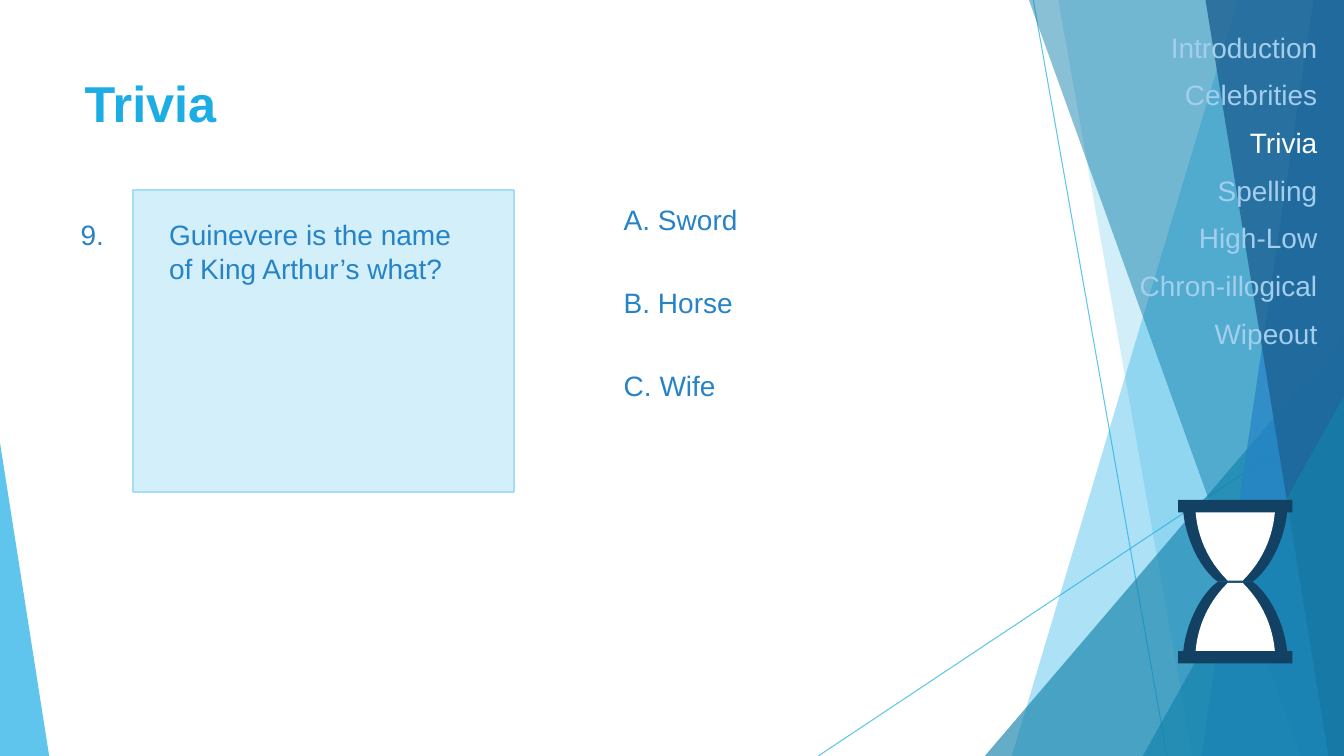
from lxml import etree
from pptx import Presentation
from pptx.dml.color import RGBColor
from pptx.enum.shapes import MSO_CONNECTOR, MSO_SHAPE
from pptx.enum.text import MSO_ANCHOR, MSO_AUTO_SIZE, PP_ALIGN
from pptx.oxml.ns import qn
from pptx.util import Cm, Pt

RECT, TRIANGLE = MSO_SHAPE.RECTANGLE, MSO_SHAPE.ISOSCELES_TRIANGLE
STRAIGHT = MSO_CONNECTOR.STRAIGHT
LEFT, RIGHT, TOP = PP_ALIGN.LEFT, PP_ALIGN.RIGHT, MSO_ANCHOR.TOP
W, H = 33.87, 19.05
SKY, TEAL, BLUE, NAVY = "1CADE4", "1482AC", "2683C6", "134163"
PALE, WHITE = "A3CEED", "FFFFFF"


def color(fmt, hex_color, opacity=100):
    """Set a fill, line fill or font to a solid colour, opacity in percent."""
    if hasattr(fmt, "solid"):
        fmt.solid()
        target = fmt.fore_color
    else:
        target = fmt.color
    target.rgb = RGBColor.from_string(hex_color)
    if opacity < 100:
        for clr in fmt._xPr.iter(qn("a:srgbClr")):
            etree.SubElement(clr, qn("a:alpha"), val=str(opacity * 1000))


def polygon(points, hex_color, opacity=100):
    """Draw a closed, unlined shape through points given in cm."""
    pts = [(Cm(x), Cm(y)) for x, y in points]
    fb = s.shapes.build_freeform(*pts[0])
    fb.add_line_segments(pts[1:], close=True)
    sp = fb.convert_to_shape()
    sp.shadow.inherit = False
    sp.line.fill.background()
    color(sp.fill, hex_color, opacity)


prs = Presentation()
prs.slide_width, prs.slide_height = Cm(W), Cm(H)
s = prs.slides.add_slide(prs.slide_layouts[5])

# Background: thin lines, slanted facets and corner triangles
for x1, y1, x2 in [(26.04, 0, 29.41), (W, 10.24, 20.62)]:
    line = s.shapes.add_connector(STRAIGHT, Cm(x1), Cm(y1), Cm(x2), Cm(H))
    line.line.width = Pt(0.75)
    color(line.line.fill, SKY, 70)
    etree.SubElement(line._element.spPr, qn("a:effectLst"))

# Facets reach the right edge: top x, bottom x; triangles: left, top, width, apex
facets = [
    ("facet", (31.19, 25.5), SKY, 36),
    ("facet", (26.67, 30.05), SKY, 20),
    ("triangle", (24.82, 8.46, W - 24.82, 1), TEAL, 66),
    ("facet", (25.93, 32.79), TEAL, 50),
    ("facet", (33.1, 30.28), BLUE, 70),
    ("facet", (30.38, 33.48), "1D6294", 80),
    ("triangle", (28.8, 9.98, W - 28.8, 1), TEAL, 66),
    ("triangle", (0, 11.15, 1.24, 0), SKY, 70),
]
for kind, place, hex_color, opacity in facets:
    if kind == "facet":
        top_x, bottom_x = place
        polygon([(top_x, 0), (W, 0), (W, H), (bottom_x, H)], hex_color, opacity)
        continue
    left, top, width, apex = place
    sp = s.shapes.add_shape(TRIANGLE, Cm(left), Cm(top), Cm(width), Cm(H - top))
    sp.adjustments[0] = apex
    sp.shadow.inherit = False
    sp.line.fill.background()
    color(sp.fill, hex_color, opacity)

# Question panel
panel = s.shapes.add_shape(RECT, Cm(3.35), Cm(4.78), Cm(9.6), Cm(7.62))
panel.shadow.inherit = False
color(panel.fill, "D2EFFA")
color(panel.line.fill, "A4DEF4")
panel.line.width = Pt(1.5)

# Title
title = s.shapes.title
title.left, title.top, title.width, title.height = Cm(1.88), Cm(1.7), Cm(23.88), Cm(3.66)
tf = title.text_frame
tf.text = "Trivia"
tf.vertical_anchor = TOP
tf.auto_size = MSO_AUTO_SIZE.NONE
p = tf.paragraphs[0]
p.alignment = LEFT
p.font.name, p.font.size, p.font.bold = "Arial", Pt(36), True
color(p.font, SKY)

# Question, answers and section list
sections = ["Introduction", "Celebrities", "Trivia", "Spelling",
            "High-Low", "Chron-illogical", "Wipeout"]
texts = [
    (4.01, 5.36, 8.38, 1.96, ["Guinevere is the name of King Arthur’s what?"]),
    (1.78, 5.36, 1.14, 1.12, ["9."]),
    (26.82, 0.64, 6.63, 11.48, sections),
]
for i, answer in enumerate(["A. Sword", "B. Horse", "C. Wife"]):
    texts.append((15.47, 4.98 + 2.09 * i, 8.48, 1.12, [answer]))

for left, top, width, height, lines in texts:
    tf = s.shapes.add_textbox(Cm(left), Cm(top), Cm(width), Cm(height)).text_frame
    tf.word_wrap = lines != ["9."]
    tf.text = "\n".join(lines)
    for p in tf.paragraphs:
        p.font.name, p.font.size = "Arial", Pt(20)
        color(p.font, BLUE)
        if lines is sections:
            p.alignment = RIGHT
            p.space_before = Pt(10)
            color(p.font, WHITE if p.text == "Trivia" else PALE)

# Hourglass: each half side is a Bezier curve of (offset from axis, y)
AXIS, WAIST, STEPS = 31.13, 14.66, 12
outer = [(1.31, 12.9), (1.26, 13.49), (0.93, 14.3), (0.44, WAIST)]
inner = [(1, 12.9), (0.95, 13.49), (0.72, 14.1), (0.19, 14.63)]
for controls, hex_color in [(outer, NAVY), (inner, WHITE)]:
    side = []
    for i in range(STEPS + 1):
        t = i / STEPS
        weights = [(1 - t) ** 3, 3 * t * (1 - t) ** 2, 3 * t * t * (1 - t), t ** 3]
        side.append([sum(w * c[k] for w, c in zip(weights, controls)) for k in (0, 1)])
    bulb = [(AXIS + dx, y) for dx, y in side] + [(AXIS - dx, y) for dx, y in side[::-1]]
    polygon(bulb, hex_color)
    polygon([(x, 2 * WAIST - y) for x, y in bulb], hex_color)

for top in (12.6, 16.41):
    cap = s.shapes.add_shape(RECT, Cm(29.69), Cm(top), Cm(2.88), Cm(0.31))
    cap.shadow.inherit = False
    cap.line.fill.background()
    color(cap.fill, NAVY)

prs.save("out.pptx")
